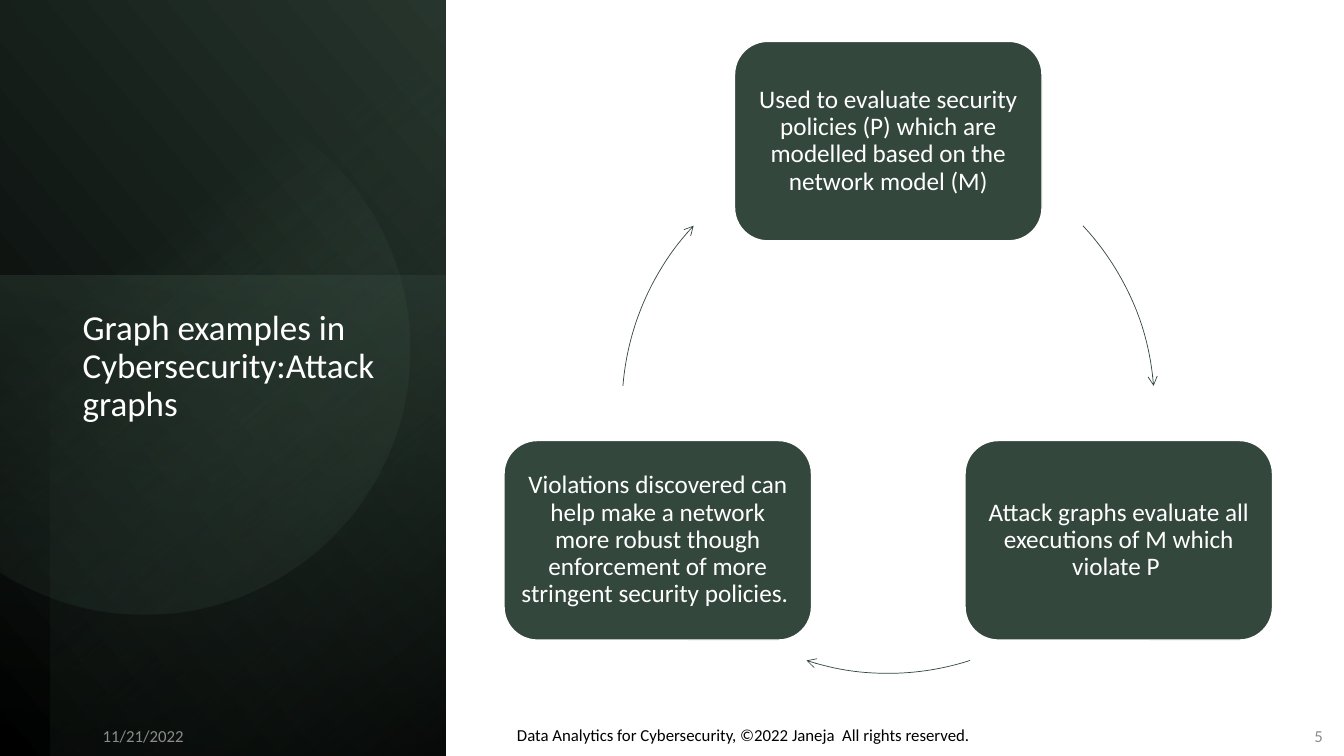
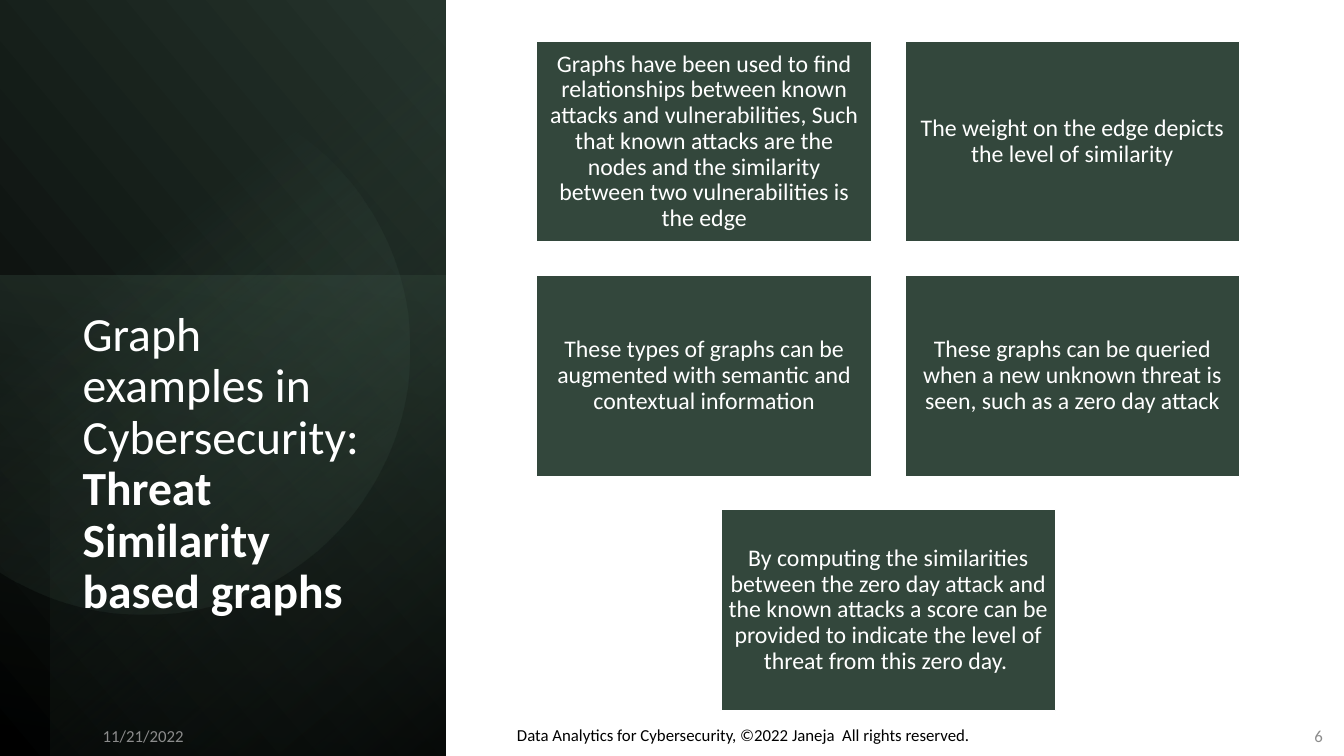
"""Build two slides on graph examples in cybersecurity."""
import math
from dataclasses import dataclass

import pptx
import pptx.dml.color
import pptx.enum.shapes
import pptx.enum.text
import pptx.oxml
import pptx.oxml.ns
import pptx.util

Inches = pptx.util.Inches
Pt = pptx.util.Pt
RGB = pptx.dml.color.RGBColor.from_string
Preset = pptx.enum.shapes.MSO_SHAPE
Align = pptx.enum.text.PP_ALIGN
Anchor = pptx.enum.text.MSO_ANCHOR
qn = pptx.oxml.ns.qn
nsdecls = pptx.oxml.ns.nsdecls
parse_xml = pptx.oxml.parse_xml


@dataclass(frozen=True)
class Theme:
    font: str = "Calibri"
    green: str = "33473C"
    dark_green: str = "26352D"
    deep_green: str = "1A241E"
    pale_green: str = "789E89"
    black: str = "000000"
    white: str = "FFFFFF"
    grey: str = "8C8C8C"
    cycle_size: int = 18
    grid_size: int = 17
    footer_size: int = 12


THEME = Theme()


def add_curve(shapes, preset, center_x, center_y, radius, start, end):
    box = (center_x - radius, center_y - radius, 2 * radius, 2 * radius)
    curve = shapes.add_shape(preset, *map(Inches, box))
    curve.adjustments[0] = start * 0.6
    curve.adjustments[1] = end * 0.6
    return curve


def write_text(shape, text, size, colour, align, anchor, inset=(0.1, 0.05), spacing=0.9, bold_tail=""):
    frame = shape.text_frame
    frame.word_wrap = True
    frame.auto_size = pptx.enum.text.MSO_AUTO_SIZE.NONE
    frame.vertical_anchor = anchor
    frame.margin_left = frame.margin_right = Inches(inset[0])
    frame.margin_top = frame.margin_bottom = Inches(inset[1])
    frame.text = text
    paragraph = frame.paragraphs[0]
    paragraph.alignment = align
    paragraph.line_spacing = spacing
    if bold_tail:
        tail = paragraph.add_run()
        tail.text = bold_tail
        tail.font.bold = True
    for run in paragraph.runs:
        run.font.name = THEME.font
        run.font.size = Pt(size)
        run.font.color.rgb = RGB(colour)


presentation = pptx.Presentation()
presentation.slide_width = Inches(13.33)
presentation.slide_height = Inches(7.5)

PANEL_WIDTH = 4.42
PANEL_LAYERS = [
    ((0, 0, PANEL_WIDTH, 7.5), 320, [(0, THEME.black, 100), (100, THEME.dark_green, 100)]),
    ((0, 2.73, PANEL_WIDTH, 4.77), 100, [(0, THEME.green, 50), (100, THEME.deep_green, 0)]),
    ((0.5, 0, PANEL_WIDTH - 0.5, 7.5), 230, [(0, THEME.black, 59), (69, THEME.green, 0)]),
    (None, 51.6, [(39, THEME.pale_green, 0), (100, THEME.dark_green, 26)]),
]
PANEL_CIRCLE = (1.43, 3.47, 2.63, 237, 123)

TITLES = [
    ("Graph examples in Cybersecurity:Attack graphs", "", 25),
    ("Graph examples in Cybersecurity: ", "Threat Similarity based graphs", 34),
]
FOOTERS = [
    ((0.92, 7.1, 1.01, 0.4), "11/21/2022", THEME.grey, Align.LEFT, Anchor.MIDDLE),
    (
        (4.91, 7.04, 4.93, 0.4),
        "Data Analytics for Cybersecurity, ©2022 Janeja  All rights reserved.",
        THEME.black, Align.CENTER, Anchor.BOTTOM,
    ),
    ((10.22, 7.1, 3, 0.4), "{number}", THEME.grey, Align.RIGHT, Anchor.MIDDLE),
]

BOX_INSET = (0.07, 0.07)
CENTER_X, CENTER_Y, RADIUS = 8.81, 4.04, 2.64
STEP_WIDTH, STEP_HEIGHT = 3.05, 1.98
CYCLE_STEPS = [
    "Used to evaluate security policies (P) which are modelled based on the network model (M)",
    "Attack graphs evaluate all executions of M which violate P ",
    "Violations discovered can help make a network more robust though enforcement of more "
    "stringent security policies. ",
]
CYCLE_ARROWS = [(317, 355.4), (72.1, 107.9), (184.6, 223)]

CARD_WIDTH = 3.32
CARD_HEIGHT = CARD_WIDTH * 0.6
CARD_GAP = CARD_WIDTH * 0.1
CARD_TOP, COLUMNS = 0.41, 2
CARDS = [
    "Graphs have been used to find relationships between known attacks and vulnerabilities, "
    "Such that known attacks are the nodes and the similarity between two vulnerabilities is the edge",
    "The weight on the edge depicts the level of similarity",
    "These types of graphs can be augmented with semantic and contextual information",
    "These graphs can be queried when a new unknown threat is seen, such as a zero day attack",
    "By computing the similarities between the zero day attack and the known attacks a score can "
    "be provided to indicate the level of threat from this zero day. ",
]

boxes_by_slide = [[], []]
for index, text in enumerate(CYCLE_STEPS):
    angle = math.radians(-90 + index * 360 / len(CYCLE_STEPS))
    left = CENTER_X + RADIUS * math.cos(angle) - STEP_WIDTH / 2
    top = CENTER_Y + RADIUS * math.sin(angle) - STEP_HEIGHT / 2
    boxes_by_slide[0].append(
        (Preset.ROUNDED_RECTANGLE, (left, top, STEP_WIDTH, STEP_HEIGHT), text, THEME.cycle_size)
    )
for index, text in enumerate(CARDS):
    row, column = divmod(index, COLUMNS)
    in_row = min(COLUMNS, len(CARDS) - row * COLUMNS)
    row_width = in_row * CARD_WIDTH + (in_row - 1) * CARD_GAP
    left = CENTER_X - row_width / 2 + column * (CARD_WIDTH + CARD_GAP)
    top = CARD_TOP + row * (CARD_HEIGHT + CARD_GAP)
    boxes_by_slide[1].append(
        (Preset.RECTANGLE, (left, top, CARD_WIDTH, CARD_HEIGHT), text, THEME.grid_size)
    )

for number, (heading, bold_tail, heading_size), boxes, arrows in zip(
    (5, 6), TITLES, boxes_by_slide, (CYCLE_ARROWS, [])
):
    slide = presentation.slides.add_slide(presentation.slide_layouts[5])
    shapes = slide.shapes

    for area, angle, stops in PANEL_LAYERS:
        if area:
            layer = shapes.add_shape(Preset.RECTANGLE, *map(Inches, area))
        else:
            layer = add_curve(shapes, Preset.CHORD, *PANEL_CIRCLE)
        layer.shadow.inherit = False
        layer.line.fill.background()
        layer.fill.solid()
        stop_xml = "".join(
            f'<a:gs pos="{position * 1000}"><a:srgbClr val="{colour}">'
            f'<a:alpha val="{opacity * 1000}"/></a:srgbClr></a:gs>'
            for position, colour, opacity in stops
        )
        gradient = parse_xml(
            f'<a:gradFill {nsdecls("a")} rotWithShape="1"><a:gsLst>{stop_xml}</a:gsLst>'
            f'<a:lin ang="{round(angle * 60000)}" scaled="0"/></a:gradFill>'
        )
        properties = layer._element.spPr
        properties.replace(properties.find(qn("a:solidFill")), gradient)

    title = shapes.title
    title.left, title.top, title.width, title.height = map(Inches, (0.72, 3.03, 3.15, 3.36))
    write_text(title, heading, heading_size, THEME.white, Align.LEFT, Anchor.TOP, bold_tail=bold_tail)
    shapes._spTree.append(title._element)

    for preset, area, text, size in boxes:
        box = shapes.add_shape(preset, *map(Inches, area))
        box.shadow.inherit = False
        box.fill.solid()
        box.fill.fore_color.rgb = RGB(THEME.green)
        box.line.color.rgb = RGB(THEME.white)
        box.line.width = Pt(1)
        write_text(box, text, size, THEME.white, Align.CENTER, Anchor.MIDDLE, BOX_INSET)

    for start, end in arrows:
        arrow = add_curve(shapes, Preset.ARC, CENTER_X, CENTER_Y, RADIUS, start, end)
        arrow.shadow.inherit = False
        arrow.fill.background()
        arrow.line.color.rgb = RGB(THEME.green)
        arrow.line.width = Pt(0.5)
        arrow.line._get_or_add_ln().append(parse_xml(f'<a:tailEnd {nsdecls("a")} type="arrow"/>'))

    for area, text, colour, align, anchor in FOOTERS:
        footer = shapes.add_textbox(*map(Inches, area))
        write_text(
            footer, text.format(number=number), THEME.footer_size, colour, align, anchor, spacing=1.0
        )

presentation.save("out.pptx")
